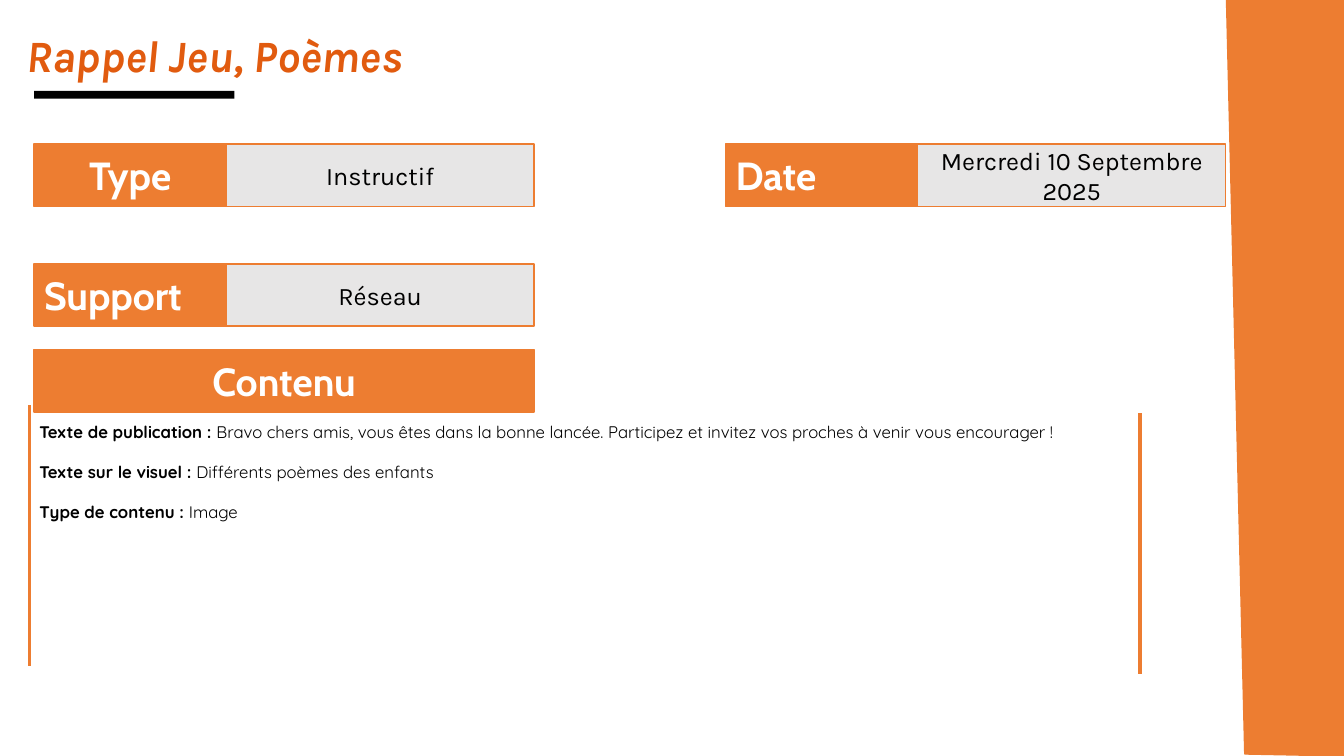
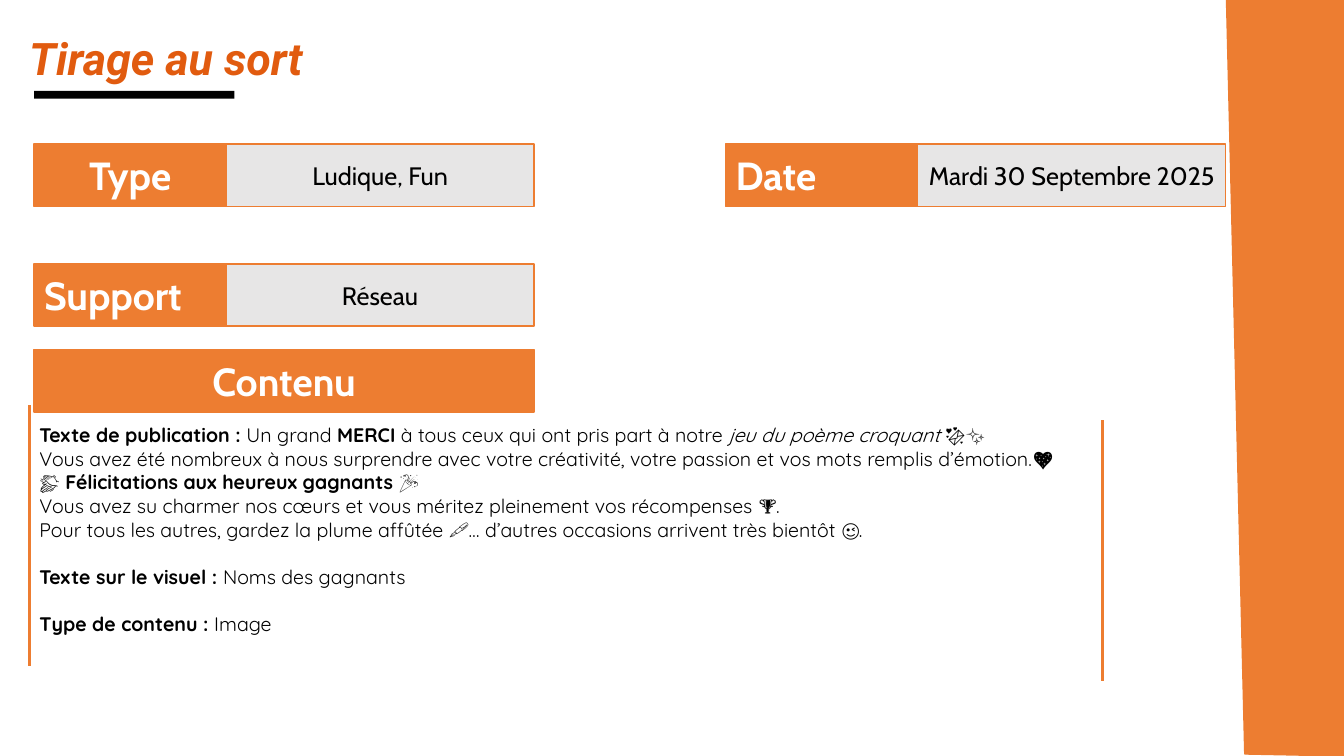
from lxml.etree import SubElement
from pptx import Presentation
from pptx.dml.color import RGBColor
from pptx.enum.shapes import MSO_CONNECTOR as CONNECTOR, MSO_SHAPE as SHAPE
from pptx.enum.text import MSO_ANCHOR as ANCHOR, MSO_AUTO_SIZE as AUTO_SIZE, PP_ALIGN as ALIGN
from pptx.oxml.ns import qn
from pptx.util import Cm, Pt

WIDTH, HEIGHT = 33.87, 19.05
ORANGE, TITLE_ORANGE, GREY = "ED7D31", "E15B0F", "E7E6E6"
BLACK, WHITE = "000000", "FFFFFF"
LABEL_FONT, BODY_FONT = "Cabin", "Quicksand"

LEFT, RIGHT = 0.86, 18.29
LABEL_W, VALUE_W, BAR_H = 4.84, 7.76, 1.57
ROW_1, ROW_2, CONTENT_TOP = 3.63, 6.65, 8.81
RULE_H = 6.58

SLIDES = [
    dict(
        title="Rappel Jeu, Poèmes", title_font="Karla", title_at=(0.41, 0.56),
        value_font="Karla", kind="Instructif", date="Mercredi 10 Septembre 2025",
        support="Réseau", right_rule=(28.73, 10.41),
        body_box=(0.74, 10.49, 27.05, 3.84), body_size=12,
        blocks=[
            [[("Texte de publication : ", "b"),
              ("Bravo chers amis, vous êtes dans la bonne lancée. Participez et "
               "invitez vos proches à venir vous encourager !", "")]],
            [[("Texte sur le visuel : ", "b"), ("Différents poèmes des enfants", "")]],
            [[("Type de contenu : ", "b"), ("Image", "")]],
        ],
    ),
    dict(
        title="Tirage au sort", title_font="Roboto", title_at=(0.48, 0.64),
        value_font="Cabin", kind="Ludique, Fun", date="Mardi 30 Septembre 2025",
        support="Réseau", right_rule=(27.79, 10.59),
        body_box=(0.74, 10.54, 27.28, 6.83), body_size=14,
        blocks=[
            [[("Texte de publication : ", "b"), ("Un grand ", ""), ("MERCI", "b"),
              (" à tous ceux qui ont pris part à notre ", ""),
              ("jeu du poème croquant", "i"), (" 💌✨", "")],
             [("Vous avez été nombreux à nous surprendre avec votre créativité, "
               "votre passion et vos mots remplis d’émotion.💖", "")],
             [("👏 ", ""), ("Félicitations aux heureux gagnants", "b"), (" 🎉", "")],
             [("Vous avez su charmer nos cœurs et vous méritez pleinement "
               "vos récompenses 🏆.", "")],
             [("Pour tous les autres, gardez la plume affûtée 🖋️… d’autres "
               "occasions arrivent très bientôt 😉.", "")]],
            [[("Texte sur le visuel : ", "b"), ("Noms des gagnants", "")]],
            [[("Type de contenu : ", "b"), ("Image", "")]],
        ],
    ),
]


def rgb(color):
    return RGBColor.from_string(color)


def style_run(r, font, size, color, bold=False, italic=False):
    f = r.font
    f.name, f.size, f.bold, f.italic = font, Pt(size), bold, italic
    f.color.rgb = rgb(color)


def paint(sp, fill, line=None):
    sp.shadow.inherit = False
    sp.fill.solid()
    sp.fill.fore_color.rgb = rgb(fill)
    if line:
        sp.line.color.rgb = rgb(line)
        sp.line.width = Pt(1)
    else:
        sp.line.fill.background()


def place(sp, left, top, width, height):
    sp.left, sp.top, sp.width, sp.height = Cm(left), Cm(top), Cm(width), Cm(height)


def add_bar(slide, left, top, width, text, fill, font, size, color, bold=False,
            align=ALIGN.CENTER):
    sp = slide.shapes.add_shape(SHAPE.RECTANGLE, Cm(left), Cm(top), Cm(width), Cm(BAR_H))
    paint(sp, fill, ORANGE)
    tf = sp.text_frame
    tf.word_wrap, tf.vertical_anchor = True, ANCHOR.MIDDLE
    tf.text = text
    p = tf.paragraphs[0]
    p.alignment = align
    style_run(p.runs[0], font, size, color, bold)


def add_label(slide, left, top, width, text, align=ALIGN.CENTER):
    add_bar(slide, left, top, width, text, ORANGE, LABEL_FONT, 28, WHITE, True, align)


def add_field(slide, left, top, label, value, value_font, align=ALIGN.LEFT):
    """Orange label with its grey value box on the right."""
    add_bar(slide, left + LABEL_W, top, VALUE_W, value, GREY, value_font, 18, BLACK)
    add_label(slide, left, top, LABEL_W, label, align)


def add_rule(slide, x, top):
    line = slide.shapes.add_connector(CONNECTOR.STRAIGHT, Cm(x), Cm(top), Cm(x), Cm(top + RULE_H))
    line.line.color.rgb = rgb(ORANGE)
    line.line.width = Pt(2.25)
    SubElement(line._element.spPr, qn("a:effectLst"))


def add_side_band(slide):
    builder = slide.shapes.build_freeform(Cm(30.91), 0)
    corners = [(WIDTH, 0), (WIDTH, HEIGHT), (31.37, 19)]
    builder.add_line_segments([(Cm(x), Cm(y)) for x, y in corners])
    paint(builder.convert_to_shape(), ORANGE, ORANGE)


def fill_title(slide, text, font, left, top):
    sp = slide.shapes.title
    place(sp, left, top, 28.02, 1.32)
    tf = sp.text_frame
    tf.text = text
    tf.word_wrap, tf.auto_size, tf.vertical_anchor = True, AUTO_SIZE.NONE, ANCHOR.TOP
    p = tf.paragraphs[0]
    p.alignment = ALIGN.LEFT
    style_run(p.runs[0], font, 32, TITLE_ORANGE, True, True)
    underline = slide.shapes.add_shape(SHAPE.RECTANGLE, Cm(LEFT), Cm(2.29), Cm(5.05), Cm(0.2))
    paint(underline, BLACK)


def fill_body(slide, box, blocks, size):
    """Blocks of lines, set apart by the height of one line."""
    sp = slide.placeholders[1]
    place(sp, *box)
    tf = sp.text_frame
    tf.word_wrap, tf.auto_size = True, AUTO_SIZE.NONE
    lines = [(i > 0 and j == 0, line)
             for i, block in enumerate(blocks) for j, line in enumerate(block)]
    for n, (gap, line) in enumerate(lines):
        p = tf.add_paragraph() if n else tf.paragraphs[0]
        p.space_before = Pt(size * 1.2 if gap else 0)
        pPr = p._p.get_or_add_pPr()
        pPr.set("marL", "0")
        pPr.set("indent", "0")
        SubElement(pPr, qn("a:buNone"))
        for text, style in line:
            r = p.add_run()
            r.text = text
            style_run(r, BODY_FONT, size, BLACK, style == "b", style == "i")


def add_post_slide(prs, post):
    slide = prs.slides.add_slide(prs.slide_layouts[1])
    font = post["value_font"]
    add_side_band(slide)
    fill_title(slide, post["title"], post["title_font"], *post["title_at"])
    add_field(slide, LEFT, ROW_1, "Type", post["kind"], font, ALIGN.CENTER)
    add_field(slide, RIGHT, ROW_1, "Date", post["date"], font)
    add_field(slide, LEFT, ROW_2, "Support", post["support"], font)
    add_rule(slide, 0.74, 10.21)
    add_label(slide, LEFT, CONTENT_TOP, LABEL_W + VALUE_W, "Contenu")
    add_rule(slide, *post["right_rule"])
    fill_body(slide, post["body_box"], post["blocks"], post["body_size"])


def main():
    prs = Presentation()
    prs.slide_width, prs.slide_height = Cm(WIDTH), Cm(HEIGHT)
    for post in SLIDES:
        add_post_slide(prs, post)
    prs.save("out.pptx")


if __name__ == "__main__":
    main()
